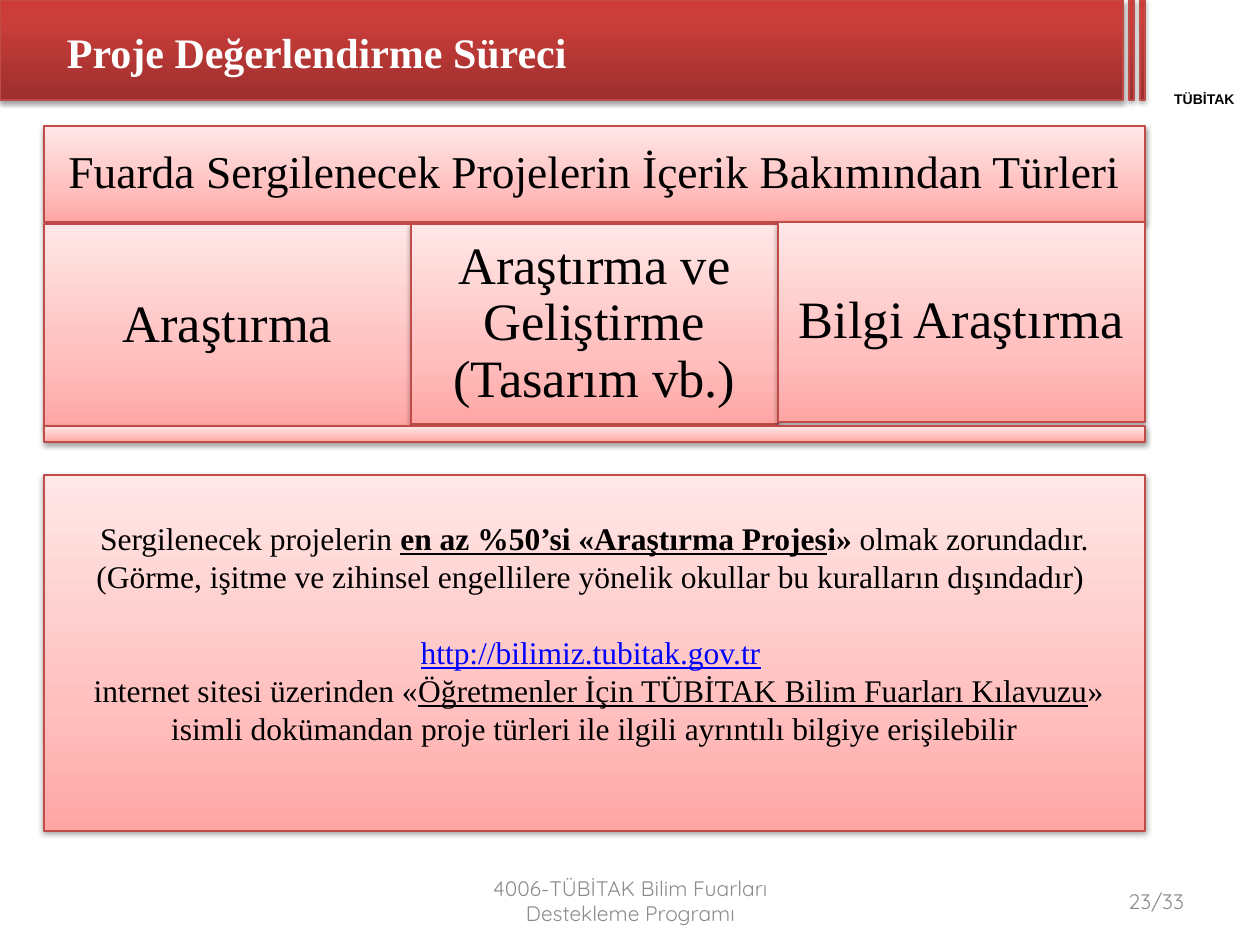
from copy import deepcopy
from dataclasses import dataclass

from lxml import etree
from pptx import Presentation
from pptx.dml.color import RGBColor
from pptx.enum.shapes import MSO_SHAPE
from pptx.enum.text import MSO_ANCHOR, PP_ALIGN
from pptx.oxml.ns import qn
from pptx.util import Emu, Pt

RECTANGLE = MSO_SHAPE.RECTANGLE
TOP, MIDDLE = MSO_ANCHOR.TOP, MSO_ANCHOR.MIDDLE
LEFT, CENTER, RIGHT = PP_ALIGN.LEFT, PP_ALIGN.CENTER, PP_ALIGN.RIGHT
EMU_PER_PX = 914400 / 126


@dataclass(frozen=True)
class Theme:
    black: str = "000000"
    white: str = "FFFFFF"
    gray: str = "8C8C8C"
    link: str = "0000FF"
    border: str = "BF4C48"
    # Gradient stops run from the bottom edge to the top edge.
    header_fill: tuple = ((0, "9C2F2D"), (0.8, "CB3E3A"), (1, "CE3B37"))
    panel_fill: tuple = ((0, "FFA6A5"), (0.35, "FFC0BF"), (1, "FFE7E7"))
    serif: str = "Times New Roman"
    sans: str = "Arial"
    footer: str = "Quicksand"
    label_size: int = 8
    footer_size: int = 12
    body_size: int = 18
    title_size: int = 24
    heading_size: int = 26
    column_size: int = 30


def px(value):
    return Emu(round(value * EMU_PER_PX))


class SlideBuilder:
    def __init__(self, slide, theme):
        self.slide = slide
        self.theme = theme

    def bar(self, left, top, width, height, stops):
        """Add a bordered gradient rectangle with a soft shadow."""
        shape = self.slide.shapes.add_shape(
            RECTANGLE, px(left), px(top), px(width), px(height))
        shape.line.color.rgb = RGBColor.from_string(self.theme.border)
        shape.line.width = Pt(0.75)
        self.gradient(shape, stops)
        self.soft_shadow(shape)
        return shape

    def gradient(self, shape, stops):
        shape.fill.gradient()
        shape.fill.gradient_angle = 90
        stop_list = shape.element.spPr.find(".//" + qn("a:gsLst"))
        stop_list.append(deepcopy(stop_list[-1]))
        for stop, (position, color) in zip(shape.fill.gradient_stops, stops):
            stop.position = position
            stop.color.rgb = RGBColor.from_string(color)

    def soft_shadow(self, shape):
        shape.shadow.inherit = False
        effects = shape.element.spPr.find(qn("a:effectLst"))
        shadow = etree.SubElement(
            effects, qn("a:outerShdw"), blurRad=str(Pt(3.1)), dist=str(Pt(1.7)),
            dir="5400000", algn="t", rotWithShape="0")
        color = etree.SubElement(shadow, qn("a:srgbClr"), val=self.theme.black)
        etree.SubElement(color, qn("a:alpha"), val="37000")

    def panel(self, box, text, size, inset):
        shape = self.bar(*box, self.theme.panel_fill)
        self.fill_text(shape, [[(text, {})]], size, insets=(inset, inset))
        shape.text_frame.paragraphs[0].line_spacing = 0.9

    def text_box(self, box, text, size, **style):
        shape = self.slide.shapes.add_textbox(*map(px, box))
        self.fill_text(shape, [[(text, {})]], size, **style)

    def fill_text(self, shape, paragraphs, size, font=None, color=None, bold=False,
                  align=CENTER, anchor=MIDDLE, insets=(13, 6)):
        """Fill a shape with paragraphs, each a list of (text, overrides) runs."""
        frame = shape.text_frame
        frame.word_wrap = True
        frame.vertical_anchor = anchor
        frame.margin_left = frame.margin_right = px(insets[0])
        frame.margin_top = frame.margin_bottom = px(insets[1])
        for index, runs in enumerate(paragraphs):
            paragraph = frame.add_paragraph() if index else frame.paragraphs[0]
            paragraph.alignment = align
            for text, overrides in runs:
                run = paragraph.add_run()
                run.text = text
                run.font.name = font or self.theme.serif
                run.font.size = Pt(size)
                run.font.bold = overrides.get("bold", bold)
                run.font.underline = overrides.get("underline", False)
                run.font.color.rgb = RGBColor.from_string(
                    overrides.get("color", color or self.theme.black))


def add_header(builder):
    theme = builder.theme
    for left, width in ((0, 1123), (1129, 5), (1140, 5)):
        builder.bar(left, 0, width, 100, theme.header_fill)
    builder.text_box((1149, 91, 111, 16), "TÜBİTAK", theme.label_size,
                     font=theme.sans, bold=True, anchor=TOP, insets=(0, 0))
    builder.text_box((54, 3, 1071, 97), "Proje Değerlendirme Süreci",
                     theme.title_size, color=theme.white, bold=True, align=LEFT)


def add_project_types(builder, left, width):
    theme = builder.theme
    builder.panel((left, 126, width, 96),
                  "Fuarda Sergilenecek Projelerin İçerik Bakımından Türleri",
                  theme.heading_size, 14)
    columns = (
        ("Araştırma", 224, 203),
        ("Araştırma ve Geliştirme (Tasarım vb.)", 224, 200),
        ("Bilgi Araştırma", 222, 200),
    )
    column_width = width // len(columns)
    for index, (text, top, height) in enumerate(columns):
        builder.panel((left + index * column_width, top, column_width, height),
                      text, theme.column_size, 15)
    builder.bar(left, 426, width, 16, theme.panel_fill)


def add_rules(builder, left, width):
    theme = builder.theme
    underlined = {"underline": True}
    paragraphs = [
        [("Sergilenecek projelerin ", {}),
         ("en az %50’si «Araştırma Projes", {"bold": True, "underline": True}),
         ("i» ", {"bold": True}),
         ("olmak zorundadır.", {})],
        [("(Görme, işitme ve zihinsel engellilere yönelik okullar "
          "bu kuralların dışındadır) ", {})],
        [("http://bilimiz.tubitak.gov.tr",
          {"color": theme.link, "underline": True}), (" ", {})],
        [(" internet sitesi üzerinden «", {}),
         ("Öğretmenler İçin TÜBİTAK Bilim Fuarları Kılavuzu", underlined),
         ("» isimli dokümandan proje türleri ile ilgili ayrıntılı bilgiye "
          "erişilebilir", {})],
    ]
    shape = builder.bar(left, 475, width, 356, theme.panel_fill)
    builder.fill_text(shape, paragraphs, theme.body_size, anchor=TOP,
                      insets=(13, 44))
    shape.text_frame.paragraphs[2].space_before = Pt(22)


def add_footer(builder):
    theme = builder.theme
    style = {"font": theme.footer, "color": theme.gray}
    builder.text_box((903, 876, 294, 50), "23/33", theme.footer_size,
                     align=RIGHT, **style)
    builder.text_box((431, 876, 399, 50),
                     "4006-TÜBİTAK Bilim Fuarları Destekleme Programı",
                     theme.footer_size, **style)


def main():
    presentation = Presentation()
    presentation.slide_width, presentation.slide_height = px(1260), px(945)
    slide = presentation.slides.add_slide(presentation.slide_layouts[6])
    builder = SlideBuilder(slide, Theme())
    left, width = 44, 1101
    add_header(builder)
    add_project_types(builder, left, width)
    add_rules(builder, left, width)
    add_footer(builder)
    presentation.save("out.pptx")


if __name__ == "__main__":
    main()
